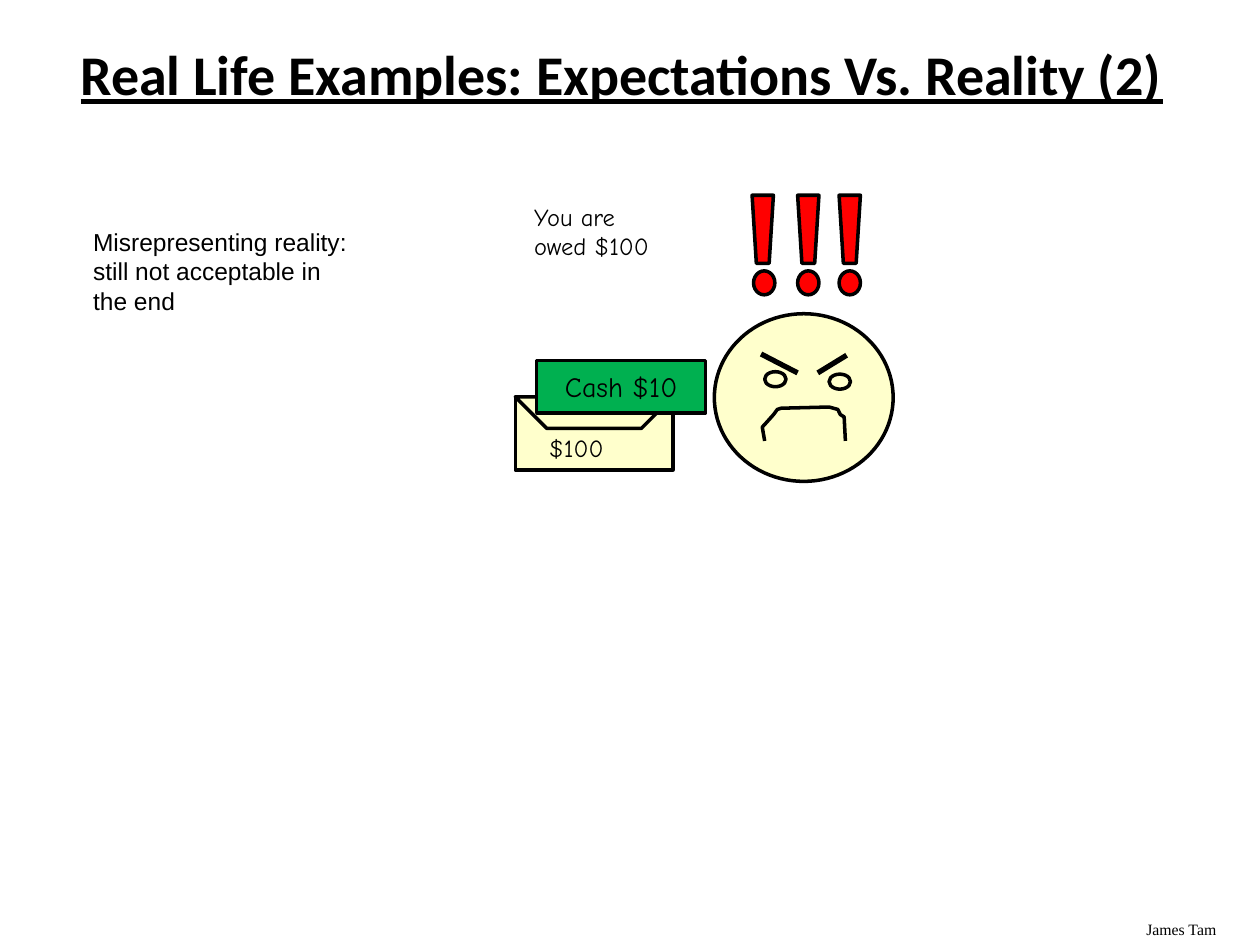
"""Build the slide on expectations versus reality with an underpaid, angry face."""
from lxml.etree import SubElement
from pptx import Presentation
from pptx.dml.color import RGBColor
from pptx.enum.shapes import MSO_CONNECTOR, MSO_SHAPE
from pptx.enum.text import MSO_ANCHOR, PP_ALIGN
from pptx.oxml.ns import qn
from pptx.util import Pt

THEME = {
    "ink": RGBColor.from_string("000000"),
    "cream": RGBColor.from_string("FFFFCC"),
    "alarm": RGBColor.from_string("FF0000"),
    "cash": RGBColor.from_string("00B050"),
    "outline": Pt(2),
    "brow": Pt(3),
    "title": {"name": "Calibri", "size": Pt(32), "bold": True, "underline": True},
    "body": {"name": "Arial", "size": Pt(14)},
    "comic": {"name": "Comic Neue", "size": Pt(14)},
    "comic_large": {"name": "Comic Neue", "size": Pt(16)},
    "author": {"name": "Times New Roman", "size": Pt(9)},
}


def write(holder, wording, style, align=PP_ALIGN.LEFT, anchor=MSO_ANCHOR.TOP):
    frame = holder.text_frame
    frame.text = wording
    frame.word_wrap = True
    frame.vertical_anchor = anchor
    paragraph = frame.paragraphs[0]
    paragraph.alignment = align
    font = paragraph.runs[0].font
    for attribute, setting in THEME[style].items():
        setattr(font, attribute, setting)
    font.color.rgb = THEME["ink"]
    return paragraph


def draw(preset, box, fill):
    part = slide.shapes.add_shape(preset, *map(Pt, box))
    part.shadow.inherit = False
    part.fill.solid()
    part.fill.fore_color.rgb = THEME[fill]
    part.line.color.rgb = THEME["ink"]
    part.line.width = THEME["outline"]
    return part


deck = Presentation()
deck.slide_width, deck.slide_height = Pt(720), Pt(540)
slide = deck.slides.add_slide(deck.slide_layouts[5])

title = slide.shapes.title
title.left, title.top, title.width, title.height = map(Pt, (33.8, 23.8, 643, 41))
heading = write(title, "Real Life Examples: Expectations Vs. Reality (2)", "title",
                PP_ALIGN.CENTER, MSO_ANCHOR.MIDDLE)
heading.line_spacing = 0.9

draw(MSO_SHAPE.RECTANGLE, (294.5, 226.8, 90, 41.8), "cream")
draw(MSO_SHAPE.FLOWCHART_MANUAL_OPERATION, (294.5, 226.8, 90, 18), "cream")

for wording, box, style in (
    ("James Tam", (648, 522, 72, 18), "author"),
    ("$100", (306.7, 244.1, 66.2, 28.8), "comic"),
    ("Misrepresenting reality: still not acceptable in the end", (46.1, 126, 162, 94.3), "body"),
    ("You are owed $100", (298.1, 111.6, 84.2, 72.7), "comic"),
):
    write(slide.shapes.add_textbox(*map(Pt, box)), wording, style)

draw(MSO_SHAPE.OVAL, (408.2, 179.3, 102.2, 95.8), "cream")

mouth_points = [
    (Pt(x), Pt(y)) for x, y in (
        (483.1, 252), (482.4, 238.3), (480.2, 236.9), (478.8, 234), (473.8, 232.6), (446.4, 233.3),
        (444.2, 234), (442.1, 236.9), (438, 241.5), (435.6, 244.1), (437, 252),
    )
]
outline = slide.shapes.build_freeform(*mouth_points[0])
outline.add_line_segments(mouth_points[1:], close=False)
mouth = outline.convert_to_shape()
mouth.shadow.inherit = False
mouth.fill.background()
mouth.line.color.rgb = THEME["ink"]
mouth.line.width = THEME["outline"]

for ends in ((434.9, 202.3, 455.8, 213.1), (467.3, 213.1, 483.8, 203)):
    brow = slide.shapes.add_connector(MSO_CONNECTOR.STRAIGHT, *map(Pt, ends))
    brow.line.color.rgb = THEME["ink"]
    brow.line.width = THEME["brow"]
    SubElement(brow._element.spPr, qn("a:effectLst"))

for eye_left, eye_top in ((437, 212.4), (473.8, 213.8)):
    draw(MSO_SHAPE.OVAL, (eye_left, eye_top, 12.2, 8.6), "cream")

for stroke_left, dot_left in ((429.8, 430.6), (455.8, 455.8), (479.5, 479.5)):
    draw(MSO_SHAPE.FLOWCHART_MANUAL_OPERATION, (stroke_left, 111.6, 12.2, 38.9), "alarm")
    draw(MSO_SHAPE.OVAL, (dot_left, 154.8, 12.2, 13.7), "alarm")

banknote = draw(MSO_SHAPE.RECTANGLE, (306.7, 205.9, 96.5, 30.2), "cash")
write(banknote, "Cash $10", "comic_large", PP_ALIGN.CENTER, MSO_ANCHOR.MIDDLE)

deck.save("out.pptx")
